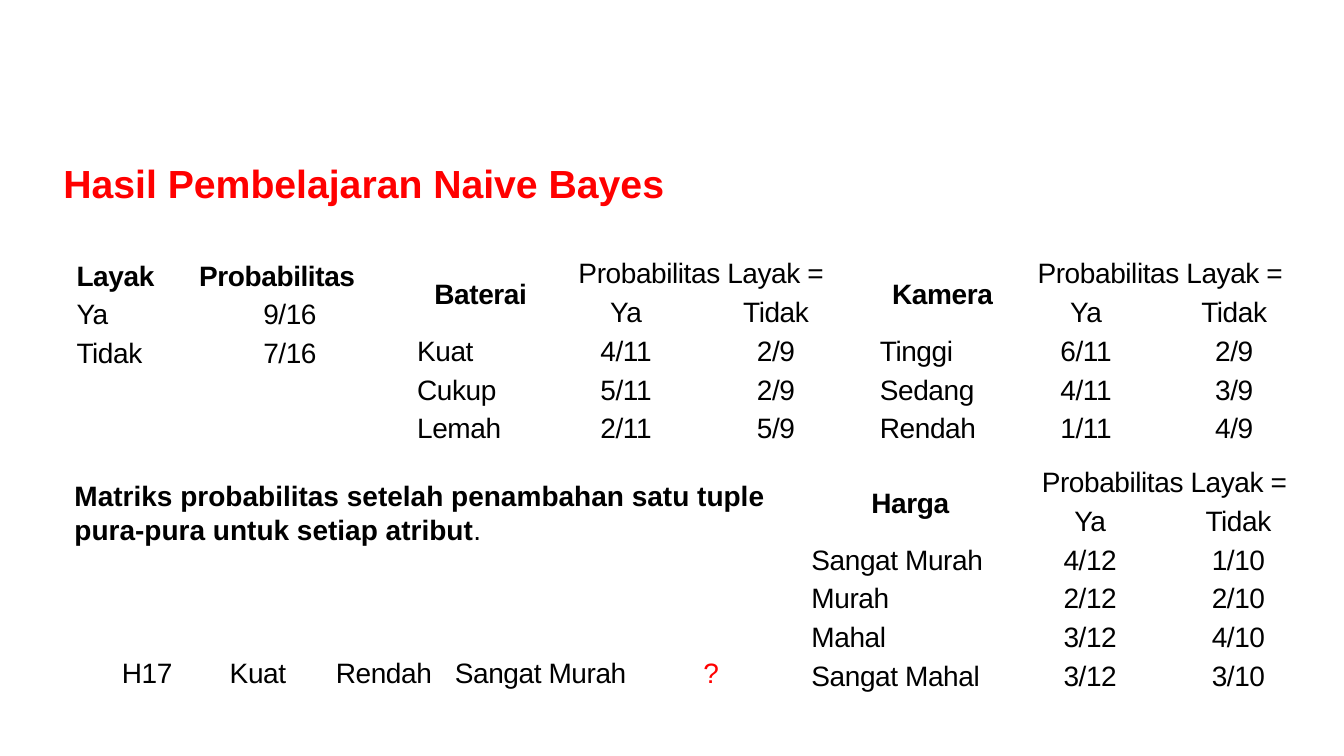
from dataclasses import dataclass

from pptx import Presentation
from pptx import util as u
from pptx.dml.color import RGBColor
from pptx.enum import text as t

LEFT, CENTER, JUSTIFY = t.PP_ALIGN.LEFT, t.PP_ALIGN.CENTER, t.PP_ALIGN.JUSTIFY
MIDDLE = t.MSO_ANCHOR.MIDDLE
PLAIN_STYLE = "{2D5ABB26-0587-4C30-8999-92F81FD0307C}"  # no style, no grid


@dataclass(frozen=True)
class Theme:
    font: str = "Arial"
    ink: str = "000000"
    accent: str = "FF0000"
    paper: str = "FFFFFF"
    title: int = 28
    body: int = 20
    tracking: str = "-30"


theme = Theme()


def write(tf, text, size=theme.body, color=theme.ink, bold=False,
          align=None, spacing=None, tracking=None):
    """Add a run to the last paragraph of a text frame."""
    p = tf.paragraphs[-1]
    if align is not None:
        p.alignment = align
    if spacing is not None:
        p.line_spacing = spacing
    r = p.add_run()
    r.text = text
    r.font.name, r.font.size, r.font.bold = theme.font, u.Pt(size), bold
    r.font.color.rgb = RGBColor.from_string(color)
    if tracking is not None:
        r.font._element.set("spc", tracking)


def text_box(slide, box):
    tf = slide.shapes.add_textbox(*map(u.Pt, box)).text_frame
    tf.word_wrap = True
    return tf


def write_cell(cell, text, **fmt):
    write(cell.text_frame, text, spacing=1.15, tracking=theme.tracking, **fmt)


def plain_table(slide, box, widths, heights):
    """Add an empty table without borders or banding."""
    gf = slide.shapes.add_table(len(heights), len(widths), *map(u.Pt, box))
    tbl = gf.table
    tbl.first_row = tbl.horz_banding = False
    tbl._tbl.tblPr.find("{*}tableStyleId").text = PLAIN_STYLE
    for col, width in zip(tbl.columns, widths):
        col.width = u.Pt(width)
    for row, height in zip(tbl.rows, heights):
        row.height = u.Pt(height)
    for cell in tbl.iter_cells():
        cell.margin_left = cell.margin_right = u.Pt(5)
        cell.margin_top = cell.margin_bottom = 0
        cell.fill.background()
    gf.height = u.Pt(box[3])
    return tbl


# Title line
def title(slide, box):
    tf = text_box(slide, box)
    tf.vertical_anchor = MIDDLE
    tf.margin_top = tf.margin_bottom = u.Pt(7.2)
    write(tf, "Hasil Pembelajaran Naive Bayes", size=theme.title,
          color=theme.accent, bold=True)


# Class probabilities
def class_table(slide, box):
    rows = [("Layak", "Probabilitas"), ("Ya", "9/16"), ("Tidak", "7/16")]
    tbl = plain_table(slide, box, (87.6, 139.6), (27.4, 16.6, 27.4))
    for i, row in enumerate(rows):
        for j, value in enumerate(row):
            write_cell(tbl.cell(i, j), value, bold=i == 0,
                       align=CENTER if i and j else LEFT)


# Conditional probabilities of one attribute
def attribute_table(slide, box, name, rows, name_width, row_height):
    value_width = (box[2] - name_width) / 2
    tbl = plain_table(slide, box, (name_width, value_width, value_width),
                      [row_height] * (len(rows) + 2))
    head = tbl.cell(0, 0)
    head.merge(tbl.cell(1, 0))
    head.vertical_anchor = MIDDLE
    write_cell(head, name, bold=True, align=CENTER)
    tbl.cell(0, 1).merge(tbl.cell(0, 2))
    write_cell(tbl.cell(0, 1), "Probabilitas Layak =", align=CENTER)
    for j, value in enumerate(("Ya", "Tidak"), 1):
        write_cell(tbl.cell(1, j), value, align=CENTER)
    for i, row in enumerate(rows, 2):
        for j, value in enumerate(row):
            write_cell(tbl.cell(i, j), value, align=CENTER if j else JUSTIFY)


# Tuple to classify
def query_row(slide, box):
    values = ("H17", "Kuat", "Rendah", "Sangat Murah", "?")
    tbl = plain_table(slide, box, (108, 75.8, 85, 143.4, 89.4), (0,))
    for j, value in enumerate(values):
        cell = tbl.cell(0, j)
        cell.fill.solid()
        cell.fill.fore_color.rgb = RGBColor.from_string(theme.paper)
        write_cell(cell, value, color=theme.accent if value == "?" else theme.ink,
                   align=CENTER if j in (0, 4) else JUSTIFY)


# Explanation
def note(slide, box):
    tf = text_box(slide, box)
    tf.auto_size = t.MSO_AUTO_SIZE.SHAPE_TO_FIT_TEXT
    write(tf, "Matriks probabilitas setelah penambahan satu tuple pura-pura "
              "untuk setiap atribut", bold=True)
    write(tf, ".")


def main():
    prs = Presentation()
    prs.slide_width, prs.slide_height = u.Pt(960), u.Pt(540)
    s = prs.slides.add_slide(prs.slide_layouts[6])

    title(s, (38.2, 105.1, 874, 50.4))
    class_table(s, (49.7, 182.9, 227.2, 82.8))
    attribute_table(s, (293, 181.4, 315, 138.2), "Baterai", [
        ("Kuat", "4/11", "2/9"),
        ("Cukup", "5/11", "2/9"),
        ("Lemah", "2/11", "5/9")], 100.6, 25)
    attribute_table(s, (623.5, 181.4, 311, 138.2), "Kamera", [
        ("Tinggi", "6/11", "2/9"),
        ("Sedang", "4/11", "3/9"),
        ("Rendah", "1/11", "4/9")], 99.4, 25)
    attribute_table(s, (574.6, 330.5, 363, 165.6), "Harga", [
        ("Sangat Murah", "4/12", "1/10"),
        ("Murah", "2/12", "2/10"),
        ("Mahal", "3/12", "4/10"),
        ("Sangat Mahal", "3/12", "3/10")], 151.2, 22.4)
    query_row(s, (51.1, 466.6, 501.6, 27.4))
    note(s, (46.1, 338.4, 507.6, 55.4))

    prs.save("out.pptx")


if __name__ == "__main__":
    main()
